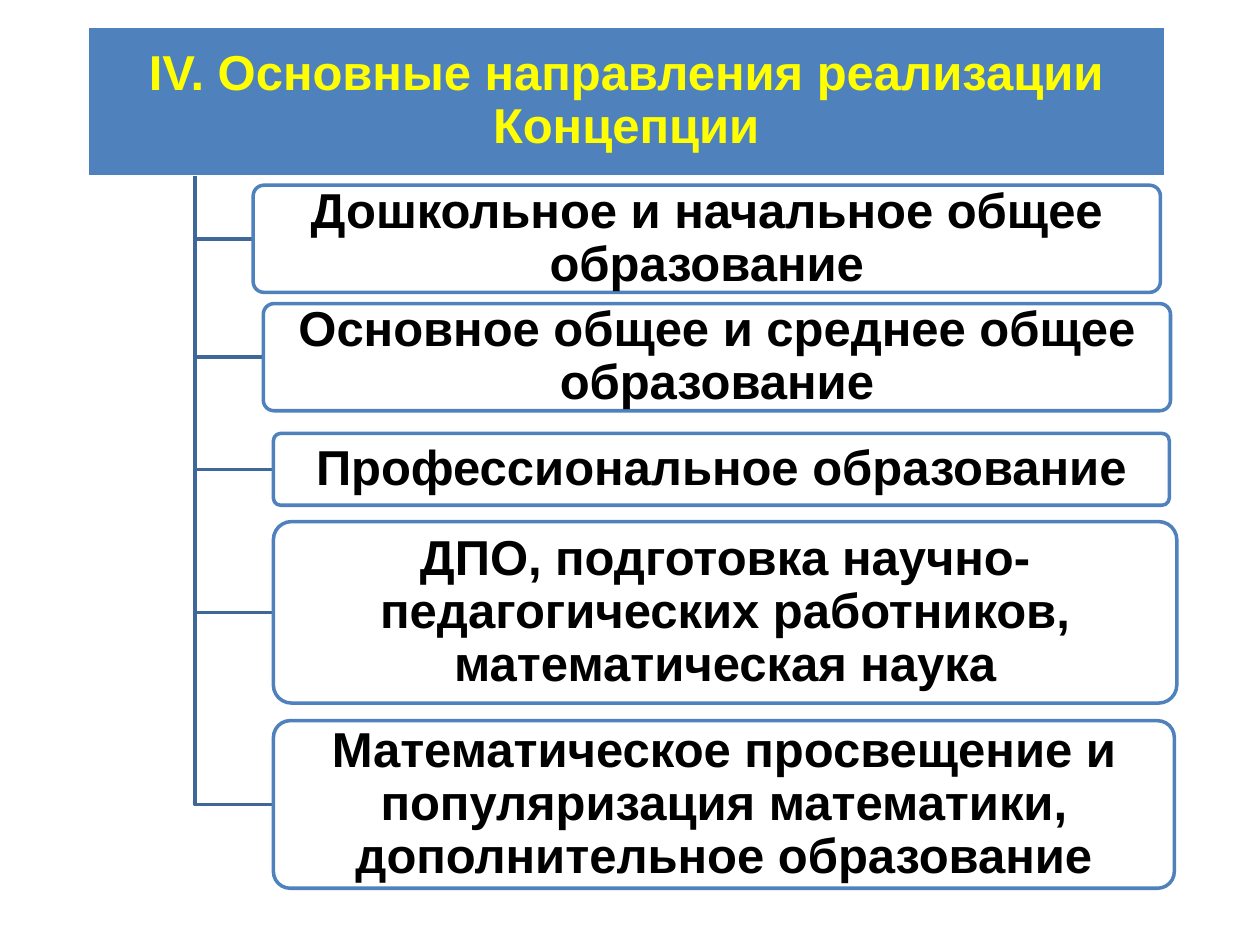
from pptx import Presentation
from pptx.dml.color import RGBColor
from pptx.enum.shapes import MSO_SHAPE as SHAPE
from pptx.enum.text import MSO_ANCHOR, MSO_AUTO_SIZE, PP_ALIGN
from pptx.oxml import parse_xml
from pptx.oxml.ns import nsdecls
from pptx.util import Inches, Pt

BLUE = RGBColor(0x4F, 0x81, 0xBD)
DARK_BLUE = RGBColor(0x3F, 0x67, 0x97)
WHITE = RGBColor(0xFF, 0xFF, 0xFF)
YELLOW = RGBColor(0xFF, 0xFF, 0x00)
BLACK = RGBColor(0, 0, 0)

# Content
HEADING = "IV. Основные направления реализации Концепции"
DIRECTIONS = [  # text, (left, top, width, height)
    ("Дошкольное и начальное общее образование", (2.01, 1.47, 7.2, 0.85)),
    ("Основное общее и среднее общее образование", (2.09, 2.41, 7.2, 0.85)),
    ("Профессиональное образование", (2.17, 3.44, 7.11, 0.57)),
    ("ДПО, подготовка научно-педагогических работников, математическая наука",
     (2.17, 4.14, 7.17, 1.44)),
    ("Математическое просвещение и популяризация математики, "
     "дополнительное образование", (2.17, 5.72, 7.15, 1.33)),
]

# Layout
HEAD_LEFT, HEAD_TOP, HEAD_W, HEAD_H = HEAD_BOX = (0.69, 0.21, 8.56, 1.19)
TRUNK_X = HEAD_LEFT + HEAD_W / 10
TRUNK_TOP = HEAD_TOP + HEAD_H
CORNER = 0.1
FRAME = dict(word_wrap=True, auto_size=MSO_AUTO_SIZE.NONE,
             vertical_anchor=MSO_ANCHOR.MIDDLE,
             margin_left=Inches(0.06), margin_right=Inches(0.06),
             margin_top=Inches(0.04), margin_bottom=Inches(0.04))
PARAGRAPH = dict(alignment=PP_ALIGN.CENTER, line_spacing=0.9)
FONT = dict(name="Arial", size=Pt(28), bold=True)


def set_all(obj, values):
    for name, value in values.items():
        setattr(obj, name, value)


def style(sp, text, fill, line, color):
    sp.fill.solid()
    sp.fill.fore_color.rgb = fill
    sp.line.color.rgb = line
    sp.line.width = Pt(2)
    tf = sp.text_frame
    set_all(tf, FRAME)
    p = tf.paragraphs[0]
    set_all(p, PARAGRAPH)
    r = p.add_run()
    r.text = text
    set_all(r.font, FONT)
    r.font.color.rgb = color


def add_branch(shapes, left, middle):
    """Elbow from the heading down to the middle of a box's left side."""
    x, y = Inches(TRUNK_X), Inches(middle)
    builder = shapes.build_freeform(x, Inches(TRUNK_TOP))
    builder.add_line_segments([(x, y), (Inches(left), y)], close=False)
    sp = builder.convert_to_shape()
    sp.shadow.inherit = False
    sp.fill.background()
    sp.line.color.rgb = DARK_BLUE
    sp.line.width = Pt(2)


prs = Presentation()
prs.slide_width, prs.slide_height = Inches(10), Inches(7.5)
slide = prs.slides.add_slide(prs.slide_layouts[5])
shapes = slide.shapes

# Heading: the title placeholder as a rounded box
title = shapes.title
set_all(title, dict(zip(("left", "top", "width", "height"), map(Inches, HEAD_BOX))))
title.element.spPr.insert(1, parse_xml(
    f'<a:prstGeom {nsdecls("a")} prst="roundRect"><a:avLst>'
    f'<a:gd name="adj" fmla="val {round(CORNER * 100000)}"/>'
    '</a:avLst></a:prstGeom>'))
style(title, HEADING, BLUE, WHITE, YELLOW)

# Directions, each joined to the trunk
for text, box in DIRECTIONS:
    left, top, _, height = box
    add_branch(shapes, left, top + height / 2)
    sp = shapes.add_shape(SHAPE.ROUNDED_RECTANGLE, *map(Inches, box))
    sp.adjustments[0] = CORNER
    sp.shadow.inherit = False
    style(sp, text, WHITE, BLUE, BLACK)

prs.save("out.pptx")
